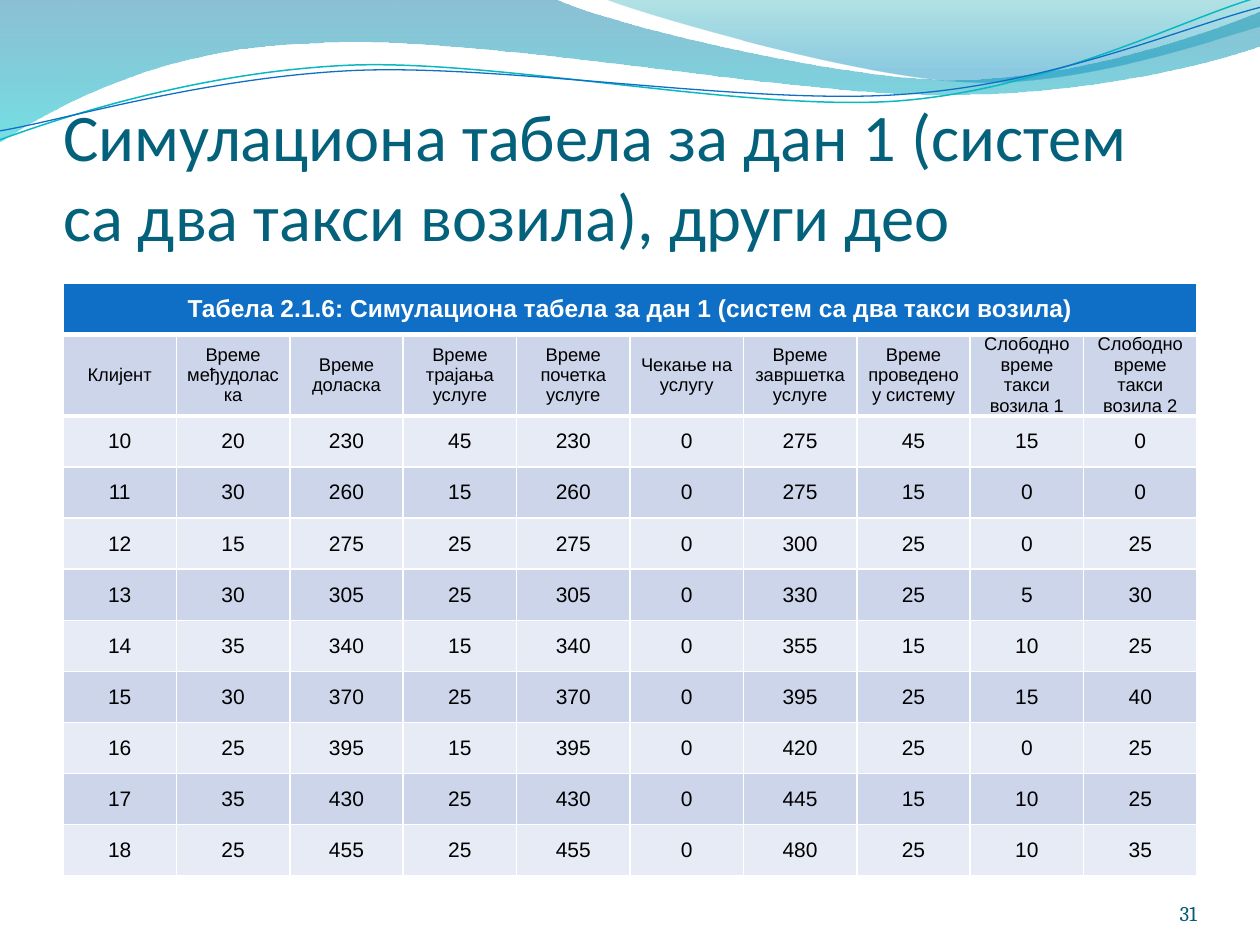
from lxml.etree import SubElement
from pptx import Presentation
from pptx.dml.color import RGBColor
from pptx.enum.text import MSO_ANCHOR, MSO_AUTO_SIZE, PP_ALIGN
from pptx.oxml.ns import qn
from pptx.util import Cm, Pt

COLORS = {
    "title": "04617B", "number": "045D75", "white": "FFFFFF", "black": "000000",
    "caption": "0F6FC6", "dark_band": "CCD5EA", "light_band": "E7EBF5",
    "teal_line": "0AB8BF", "blue_line": "0F6FC6", "deep_blue": "0074A1",
    "cyan": "00C6CF", "teal": "00A1A9", "blue": "008BBF",
}
TITLE = "Симулациона табела за дан 1 (систем са два такси возила), други део"
CAPTION = "Табела 2.1.6: Симулациона табела за дан 1 (систем са два такси возила)"
HEADINGS = [
    "Клијент", "Време међудоласка", "Време доласка", "Време трајања услуге",
    "Време почетка услуге", "Чекање на услугу", "Време завршетка услуге",
    "Време проведено у систему", "Слободно време такси возила 1",
    "Слободно време такси возила 2",
]
CLIENTS = [
    (10, 20, 230, 45, 230, 0, 275, 45, 15, 0),
    (11, 30, 260, 15, 260, 0, 275, 15, 0, 0),
    (12, 15, 275, 25, 275, 0, 300, 25, 0, 25),
    (13, 30, 305, 25, 305, 0, 330, 25, 5, 30),
    (14, 35, 340, 15, 340, 0, 355, 15, 10, 25),
    (15, 30, 370, 25, 370, 0, 395, 25, 15, 40),
    (16, 25, 395, 15, 395, 0, 420, 25, 0, 25),
    (17, 35, 430, 25, 430, 0, 445, 15, 10, 25),
    (18, 25, 455, 25, 455, 0, 480, 25, 10, 35),
]
PAGE_NUMBER = "31"

WAVES = [
    {"start": (0, 0),
     "steps": [[(11.18, -0.03)],
               [(12.09, 0.43), (16.87, 1.6), (19.25, 1.6)],
               [(21.67, 1.6), (24.33, 0.66), (25.4, 0.23)],
               [(25.43, 0.91)],
               [(24.97, 1.12), (22.1, 1.93), (18.95, 1.91)],
               [(15.8, 1.91), (9.7, 0.71), (6.53, 0.86)],
               [(3.28, 0.91), (1.17, 2.11), (-0.03, 2.87)],
               [(0, 0)]],
     "gradient": [(0, "deep_blue", 45), (1, "cyan", 55)]},
    {"start": (12.17, -0.03),
     "steps": [[(12.93, 0.28), (17.32, 1.57), (19.53, 1.65)],
               [(21.74, 1.75), (24.41, 0.81), (25.4, 0.53)],
               [(25.4, 0)],
               [(12.17, -0.03)]],
     "gradient": [(0, "teal", 30), (0.8, "blue", 45)]},
    {"start": (-0.05, 2.22),
     "steps": [[(1.19, 1.83), (4.01, 1.04), (7.06, 1.05)],
               [(10.06, 1.07), (15.01, 2.37), (18.08, 2.29)],
               [(21.13, 2.2), (23.88, 0.91), (25.4, 0.55)]],
     "line": ("teal_line", 0.85)},
    {"start": (-0.05, 2.04),
     "steps": [[(1.17, 1.9), (4.17, 1.15), (7.19, 1.16)],
               [(10.25, 1.18), (15.14, 2.25), (18.19, 2.16)],
               [(21.21, 2.1), (23.93, 1.06), (25.45, 0.75)]],
     "line": ("blue_line", 0.75)},
]
LINE_ROTATION = 357.3


def color(name):
    return RGBColor.from_string(COLORS[name])


def add_span(frame, text, font, size, shade, align, bold=False):
    para = frame.paragraphs[0]
    para.alignment = align
    span = para.add_run()
    span.text = text
    span.font.name = font
    span.font.size = Pt(size)
    span.font.bold = bold
    span.font.color.rgb = color(shade)


def set_frame(frame, top=0):
    frame.word_wrap = True
    frame.auto_size = MSO_AUTO_SIZE.NONE
    frame.vertical_anchor = MSO_ANCHOR.BOTTOM
    frame.margin_left = frame.margin_right = frame.margin_bottom = 0
    frame.margin_top = Cm(top)


def place(shape, left, top, width, height):
    shape.left, shape.top = Cm(left), Cm(top)
    shape.width, shape.height = Cm(width), Cm(height)


def bend_outline(shape, steps):
    segments = iter(list(shape.element.iter(qn("a:lnTo"))))
    for controls in steps:
        parts = [next(segments) for _ in controls]
        if len(parts) == 3:
            outline = parts[0].getparent()
            curve = SubElement(outline, qn("a:cubicBezTo"))
            parts[0].addprevious(curve)
            for part in parts:
                curve.append(part[0])
                outline.remove(part)


def add_wave(page, wave):
    filled = "gradient" in wave
    points = [point for controls in wave["steps"] for point in controls]
    builder = page.shapes.build_freeform(*(Cm(value) for value in wave["start"]))
    builder.add_line_segments([(Cm(x), Cm(y)) for x, y in points], close=filled)
    shape = builder.convert_to_shape()
    bend_outline(shape, wave["steps"])
    shape.shadow.inherit = False
    if not filled:
        shade, width = wave["line"]
        shape.rotation = LINE_ROTATION
        shape.fill.background()
        shape.line.color.rgb = color(shade)
        shape.line.width = Pt(width)
        return
    shape.line.fill.background()
    shape.fill.gradient()
    shape.fill.gradient_angle = 270
    for stop, (position, shade, _) in zip(shape.fill.gradient_stops, wave["gradient"]):
        stop.position = position
        stop.color.rgb = color(shade)
    for node, (_, _, opacity) in zip(shape.element.iter(qn("a:srgbClr")), wave["gradient"]):
        SubElement(node, qn("a:alpha"), val=str(opacity * 1000))


def add_borders(cell, top, bottom):
    properties = cell._tc.get_or_add_tcPr()
    for side, width in (("L", 1), ("R", 1), ("T", top), ("B", bottom)):
        border = SubElement(properties, qn(f"a:ln{side}"), w=str(Pt(width)))
        fill = SubElement(border, qn("a:solidFill"))
        SubElement(fill, qn("a:srgbClr"), val=COLORS["white"])


def add_client_table(page):
    rows = [[CAPTION], HEADINGS, *CLIENTS]
    frame = page.shapes.add_table(len(rows), len(HEADINGS), Cm(1.27), Cm(5.71), Cm(22.86), Cm(11.92))
    table = frame.table
    table.first_row = table.horz_banding = False
    table.cell(0, 0).merge(table.cell(0, len(HEADINGS) - 1))
    bottoms = {0: 3, 1: 2.25}
    sizes = {0: 14, 1: 10.5}
    for index, values in enumerate(rows):
        table.rows[index].height = Cm(1.62 if index == 1 else 1.03)
        band = "caption" if index == 0 else "dark_band" if index % 2 else "light_band"
        for column in range(len(HEADINGS)):
            cell = table.cell(index, column)
            add_borders(cell, bottoms.get(index - 1, 1), bottoms.get(index, 1))
            cell.fill.solid()
            cell.fill.fore_color.rgb = color(band)
            cell.vertical_anchor = MSO_ANCHOR.MIDDLE
            cell.margin_left = cell.margin_right = Cm(0.18)
            cell.margin_top = cell.margin_bottom = 0
            if column < len(values):
                add_span(cell.text_frame, str(values[column]), "Arial", sizes.get(index, 12),
                         "black" if index else "white", PP_ALIGN.CENTER, index == 0)


def main():
    deck = Presentation()
    deck.slide_width, deck.slide_height = Cm(25.4), Cm(19.05)
    page = deck.slides.add_slide(deck.slide_layouts[5])
    for wave in WAVES:
        add_wave(page, wave)

    title = page.shapes.title
    title.element.getparent().append(title.element)
    place(title, 1.27, 1.96, 22.86, 3.18)
    set_frame(title.text_frame, 0.13)
    add_span(title.text_frame, TITLE, "Calibri", 38, "title", PP_ALIGN.LEFT)

    add_client_table(page)

    box = page.shapes.add_textbox(Cm(22.02), Cm(17.65), Cm(2.11), Cm(1.02))
    set_frame(box.text_frame)
    add_span(box.text_frame, PAGE_NUMBER, "Cambria", 12, "number", PP_ALIGN.RIGHT)
    deck.save("out.pptx")


if __name__ == "__main__":
    main()
